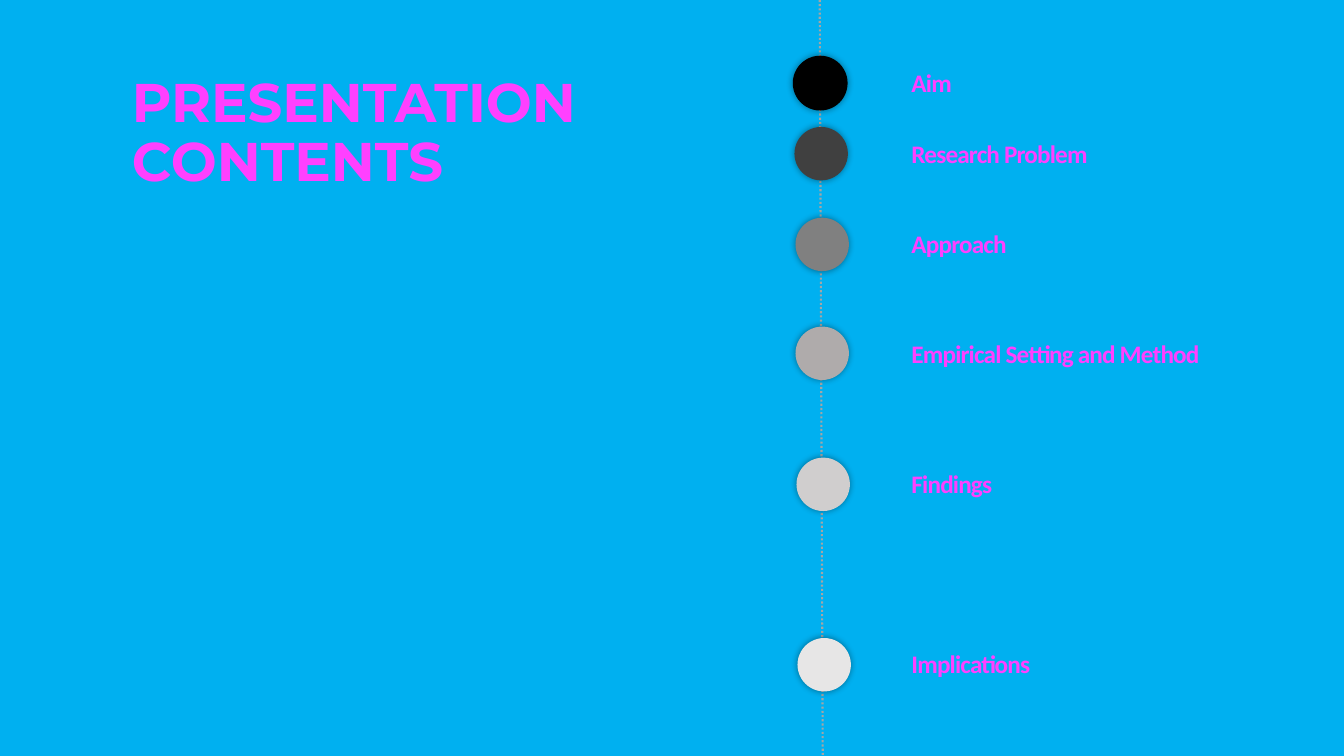
from lxml import etree
from pptx import Presentation
from pptx import util as u
from pptx.dml.color import RGBColor
from pptx.enum import dml, shapes, text
from pptx.oxml.ns import qn

COLORS = {"back": "00B0F0", "text": "FF40FF", "line": "A5A5A5", "shade": "000000"}
DOT = 0.53

# Label, label top, label width, dot left, dot top, dot colour
STEPS = [
    ("Aim", 0.63, 3.12, 7.87, 0.56, "000000"),
    ("Research Problem", 1.33, 3.12, 7.88, 1.26, "404040"),
    ("Approach", 2.23, 3.12, 7.89, 2.16, "808080"),
    ("Empirical Setting and Method", 3.32, 3.46, 7.89, 3.24, "AFABAB"),
    ("Findings", 4.61, 3.12, 9 - 1.1, 4.54, "D0CECE"),
    ("Implications", 6.39, 3.12, 7.91, 6.33, "E7E6E6"),
]


def rgb(code):
    return RGBColor.from_string(code)


def add_text(slide, words, box, size, face):
    frame = slide.shapes.add_textbox(*map(u.Inches, box)).text_frame
    frame.word_wrap = True
    para = frame.paragraphs[0]
    para.text = words
    font = para.font
    font.size, font.name, font.bold = u.Pt(size), face, True
    font.color.rgb = rgb(COLORS["text"])
    return frame


def add_title(slide):
    frame = add_text(slide, "PRESENTATION\vCONTENTS",
                     (1.21, 0.6, 5.17, 1.47), 38.9, "Montserrat")
    frame.vertical_anchor = text.MSO_ANCHOR.MIDDLE
    frame.paragraphs[0].line_spacing = 0.9


def add_label(slide, words, top, width):
    frame = add_text(slide, words, (9, top, width, 0.38), 18, "Calibri")
    frame.auto_size = text.MSO_AUTO_SIZE.SHAPE_TO_FIT_TEXT
    frame.margin_left = frame.margin_right = u.Inches(0.04)
    frame.margin_top = frame.margin_bottom = u.Inches(0.04)
    # Tighter letter spacing, in hundredths of a point
    for run in frame.paragraphs[0].runs:
        run._r.get_or_add_rPr().set("spc", "-60")


def add_axis(slide):
    line = slide.shapes.add_connector(
        shapes.MSO_CONNECTOR.STRAIGHT,
        *map(u.Inches, (8.16, 7.49, 8.13, -0.01)))
    line.line.color.rgb = rgb(COLORS["line"])
    line.line.width = u.Pt(1.5)
    line.line.dash_style = dml.MSO_LINE.ROUND_DOT
    etree.SubElement(line._element.spPr, qn("a:effectLst"))


def add_glow(shape):
    """Give the shape a soft, centred shadow."""
    shape.shadow.inherit = False
    effects = shape._element.spPr.find(qn("a:effectLst"))
    outer = etree.SubElement(effects, qn("a:outerShdw"), blurRad=str(u.Pt(5)),
                             dist="0", dir="0", algn="ctr", rotWithShape="0")
    color = etree.SubElement(outer, qn("a:srgbClr"), val=COLORS["shade"])
    etree.SubElement(color, qn("a:alpha"), val="40000")


def add_dot(slide, left, top, fill):
    dot = slide.shapes.add_shape(
        shapes.MSO_SHAPE.OVAL, *map(u.Inches, (left, top, DOT, DOT)))
    dot.fill.solid()
    dot.fill.fore_color.rgb = rgb(fill)
    # Only the black dot is outlined
    if fill == COLORS["shade"]:
        dot.line.color.rgb = rgb(fill)
        dot.line.width = u.Pt(1)
    else:
        dot.line.fill.background()
    add_glow(dot)


def main():
    deck = Presentation()
    deck.slide_width, deck.slide_height = u.Inches(13.33), u.Inches(7.5)
    slide = deck.slides.add_slide(deck.slide_layouts[6])
    slide.background.fill.solid()
    slide.background.fill.fore_color.rgb = rgb(COLORS["back"])

    # Title and dotted timeline
    add_title(slide)
    add_axis(slide)

    # Steps along the timeline
    for words, height, width, left, top, fill in STEPS:
        add_dot(slide, left, top, fill)
        add_label(slide, words, height, width)

    deck.save("out.pptx")


if __name__ == "__main__":
    main()
